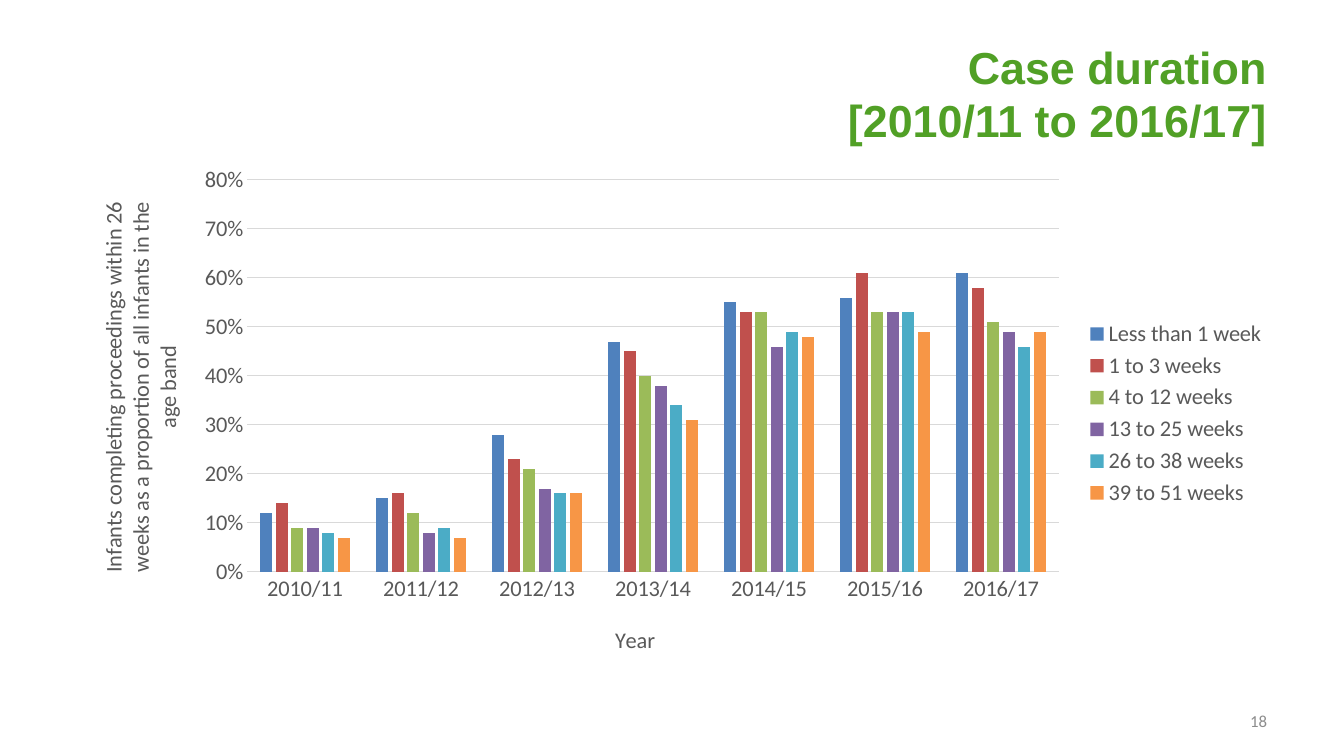
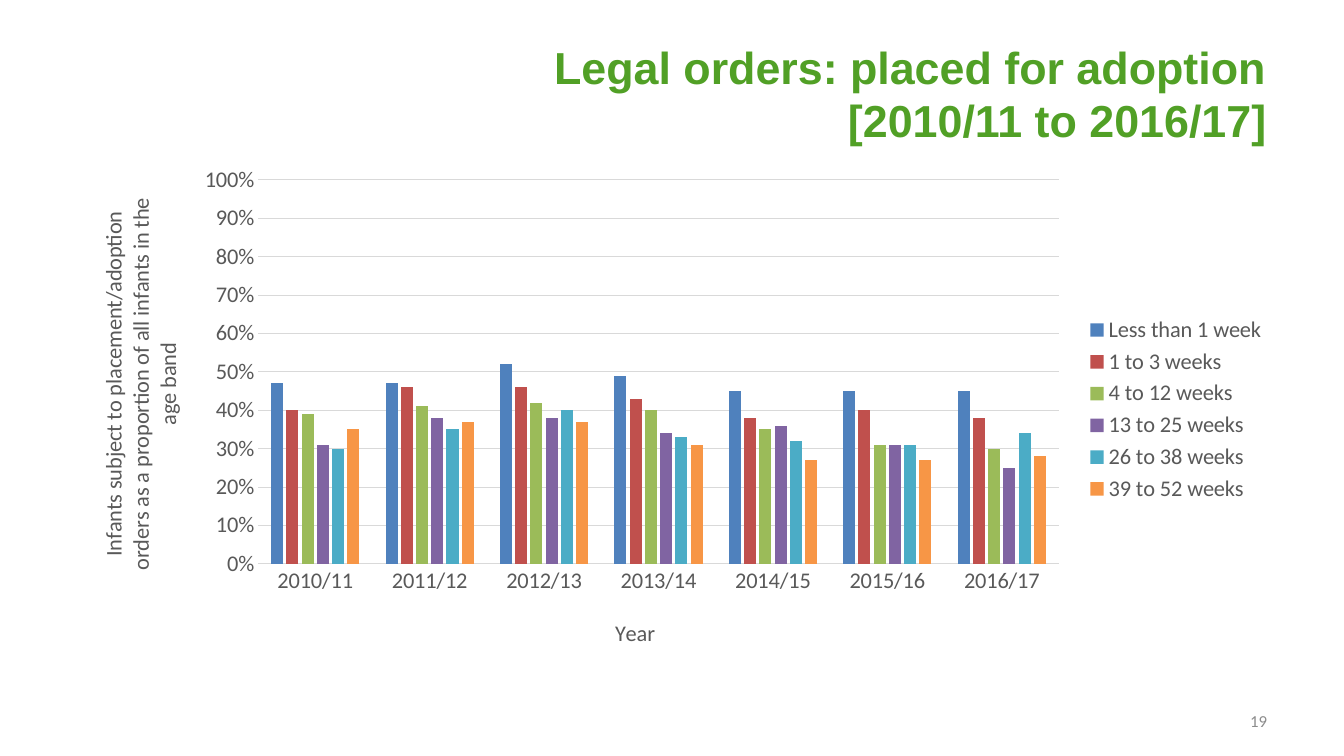
from dataclasses import dataclass

from pptx import Presentation
from pptx.chart.axis import AxisTitle
from pptx.chart.chart import Chart
from pptx.chart.data import CategoryChartData
from pptx.dml.color import RGBColor
from pptx.enum.chart import XL_CHART_TYPE, XL_LEGEND_POSITION, XL_TICK_MARK
from pptx.enum.text import MSO_ANCHOR, MSO_AUTO_SIZE, PP_ALIGN
from pptx.oxml import parse_xml
from pptx.oxml.ns import nsdecls
from pptx.slide import Slide
from pptx.text.text import Font, TextFrame
from pptx.util import Pt

EMU_PER_PX = 914400 / 100.8


def px(length: int) -> int:
    return round(length * EMU_PER_PX)


@dataclass(frozen=True)
class Theme:
    title_color: str = "51A026"
    number_color: str = "8C8C8C"
    chart_text: str = "595959"
    grid: str = "D9D9D9"
    series: tuple[str, ...] = ("4F81BD", "C0504D", "9BBB59", "8064A2", "4BACC6", "F79646")
    title_font: str = "Arial"
    body_font: str = "Calibri"
    title_size: int = 32
    chart_size: int = 16
    number_size: int = 12
    grid_width: float = 0.75


@dataclass(frozen=True)
class Box:
    left: int
    top: int
    width: int
    height: int

    def emu(self) -> tuple[int, int, int, int]:
        return px(self.left), px(self.top), px(self.width), px(self.height)


@dataclass(frozen=True)
class ChartSlide:
    number: int
    title: str
    value_title: str
    maximum: float
    chart_box: Box
    plot_box: Box
    value_title_at: tuple[int, int]
    year_at: tuple[int, int]
    series: dict[str, tuple[float, ...]]


THEME = Theme()
SLIDE_WIDTH, SLIDE_HEIGHT = 1344, 756
TITLE_BOX = Box(67, 30, 1210, 126)
NUMBER_BOX = Box(964, 701, 313, 40)
YEARS = [f"{year}/{year - 1999}" for year in range(2010, 2017)]

SLIDES = (
    ChartSlide(
        18, "Case duration\n[2010/11 to 2016/17]",
        "Infants completing proceedings within 26 weeks as a proportion of all infants in the age band",
        0.8, Box(67, 156, 1210, 515), Box(247, 180, 812, 392), (94, 198), (611, 621),
        {
            "Less than 1 week": (0.12, 0.15, 0.28, 0.47, 0.55, 0.56, 0.61),
            "1 to 3 weeks": (0.14, 0.16, 0.23, 0.45, 0.53, 0.61, 0.58),
            "4 to 12 weeks": (0.09, 0.12, 0.21, 0.4, 0.53, 0.53, 0.51),
            "13 to 25 weeks": (0.09, 0.08, 0.17, 0.38, 0.46, 0.53, 0.49),
            "26 to 38 weeks": (0.08, 0.09, 0.16, 0.34, 0.49, 0.53, 0.46),
            "39 to 51 weeks": (0.07, 0.07, 0.16, 0.31, 0.48, 0.49, 0.49),
        },
    ),
    ChartSlide(
        19, "Legal orders: placed for adoption\n[2010/11 to 2016/17]",
        "Infants subject to placement/adoption orders as a proportion of all infants in the age band",
        1, Box(67, 156, 1210, 507), Box(258, 180, 801, 384), (94, 194), (611, 614),
        {
            "Less than 1 week": (0.47, 0.47, 0.52, 0.49, 0.45, 0.45, 0.45),
            "1 to 3 weeks": (0.4, 0.46, 0.46, 0.43, 0.38, 0.4, 0.38),
            "4 to 12 weeks": (0.39, 0.41, 0.42, 0.4, 0.35, 0.31, 0.3),
            "13 to 25 weeks": (0.31, 0.38, 0.38, 0.34, 0.36, 0.31, 0.25),
            "26 to 38 weeks": (0.3, 0.35, 0.4, 0.33, 0.32, 0.31, 0.34),
            "39 to 52 weeks": (0.35, 0.37, 0.37, 0.31, 0.27, 0.27, 0.28),
        },
    ),
)


def style_font(font: Font, *, size: int, name: str, color: str, bold: bool = False) -> None:
    font.size = Pt(size)
    font.name = name
    font.bold = bold
    font.color.rgb = RGBColor.from_string(color)


def write_text(frame: TextFrame, text: str, *, size: int, name: str, color: str,
               bold: bool = False, align: PP_ALIGN = PP_ALIGN.RIGHT) -> None:
    paragraph = frame.paragraphs[0]
    paragraph.alignment = align
    for index, line in enumerate(text.splitlines()):
        if index:
            paragraph.add_line_break()
        run = paragraph.add_run()
        run.text = line
        style_font(run.font, size=size, name=name, color=color, bold=bold)


def style_chart_font(font: Font) -> None:
    style_font(font, size=THEME.chart_size, name=THEME.body_font, color=THEME.chart_text)


def set_layout(element, **fractions: float) -> None:
    for old_layout in element.xpath("c:layout"):
        element.remove(old_layout)
    target = '<c:layoutTarget val="inner"/>' if "w" in fractions else ""
    modes = '<c:xMode val="edge"/><c:yMode val="edge"/>'
    values = "".join(f'<c:{key} val="{value:.4f}"/>' for key, value in fractions.items())
    layout = parse_xml(
        f"<c:layout {nsdecls('c')}><c:manualLayout>{target}{modes}{values}</c:manualLayout></c:layout>"
    )
    element.insert(len(element.xpath("c:tx")), layout)


def add_axis_title(axis_title: AxisTitle, text: str, at: tuple[int, int], chart_box: Box,
                   rotation: int) -> None:
    write_text(axis_title.text_frame, text, size=THEME.chart_size, name=THEME.body_font,
               color=THEME.chart_text, align=PP_ALIGN.CENTER)
    axis_title.element.xpath(".//a:bodyPr")[0].set("rot", str(rotation * 60000))
    set_layout(axis_title.element, x=(at[0] - chart_box.left) / chart_box.width,
               y=(at[1] - chart_box.top) / chart_box.height)


def style_axes(chart: Chart, content: ChartSlide) -> None:
    category_axis, value_axis = chart.category_axis, chart.value_axis
    for axis in (category_axis, value_axis):
        axis.major_tick_mark = axis.minor_tick_mark = XL_TICK_MARK.NONE
        style_chart_font(axis.tick_labels.font)
    value_axis.minimum_scale = 0
    value_axis.maximum_scale = content.maximum
    value_axis.major_unit = 0.1
    value_axis.has_major_gridlines = True
    value_axis.tick_labels.number_format = "0%"
    value_axis.tick_labels.number_format_is_linked = False
    value_axis.format.line.fill.background()
    for line in (category_axis.format.line, value_axis.major_gridlines.format.line):
        line.width = Pt(THEME.grid_width)
        line.color.rgb = RGBColor.from_string(THEME.grid)
    add_axis_title(category_axis.axis_title, "Year", content.year_at, content.chart_box, 0)
    add_axis_title(value_axis.axis_title, content.value_title, content.value_title_at,
                   content.chart_box, -90)


def add_duration_chart(slide: Slide, content: ChartSlide) -> None:
    data = CategoryChartData(number_format="0%")
    data.categories = YEARS
    for name, values in content.series.items():
        data.add_series(name, values)
    box, plot_box = content.chart_box, content.plot_box
    chart = slide.shapes.add_chart(XL_CHART_TYPE.COLUMN_CLUSTERED, *box.emu(), data).chart
    chart.has_title = False
    style_chart_font(chart.font)
    chart.has_legend = True
    chart.legend.position = XL_LEGEND_POSITION.RIGHT
    chart.legend.include_in_layout = False
    style_chart_font(chart.legend.font)
    plot = chart.plots[0]
    plot.gap_width = 219
    plot.overlap = -27
    plot.vary_by_categories = False
    for series, color in zip(plot.series, THEME.series):
        series.format.fill.solid()
        series.format.fill.fore_color.rgb = RGBColor.from_string(color)
    style_axes(chart, content)
    plot_area = chart.category_axis.axis_title.element.xpath("ancestor::c:plotArea")[0]
    set_layout(plot_area, x=(plot_box.left - box.left) / box.width,
               y=(plot_box.top - box.top) / box.height,
               w=plot_box.width / box.width, h=plot_box.height / box.height)


def add_title(slide: Slide, text: str) -> None:
    title = slide.shapes.title
    title.left, title.top, title.width, title.height = TITLE_BOX.emu()
    frame = title.text_frame
    frame.auto_size = MSO_AUTO_SIZE.NONE
    frame.vertical_anchor = MSO_ANCHOR.MIDDLE
    write_text(frame, text, size=THEME.title_size, name=THEME.title_font,
               color=THEME.title_color, bold=True)


def add_slide_number(slide: Slide, number: int) -> None:
    frame = slide.shapes.add_textbox(*NUMBER_BOX.emu()).text_frame
    frame.word_wrap = True
    frame.vertical_anchor = MSO_ANCHOR.MIDDLE
    write_text(frame, str(number), size=THEME.number_size, name=THEME.body_font,
               color=THEME.number_color)


def main() -> None:
    presentation = Presentation()
    presentation.slide_width = px(SLIDE_WIDTH)
    presentation.slide_height = px(SLIDE_HEIGHT)
    title_only = presentation.slide_layouts.get_by_name("Title Only")
    for content in SLIDES:
        slide = presentation.slides.add_slide(title_only)
        add_slide_number(slide, content.number)
        add_title(slide, content.title)
        add_duration_chart(slide, content)
    presentation.save("out.pptx")


if __name__ == "__main__":
    main()
